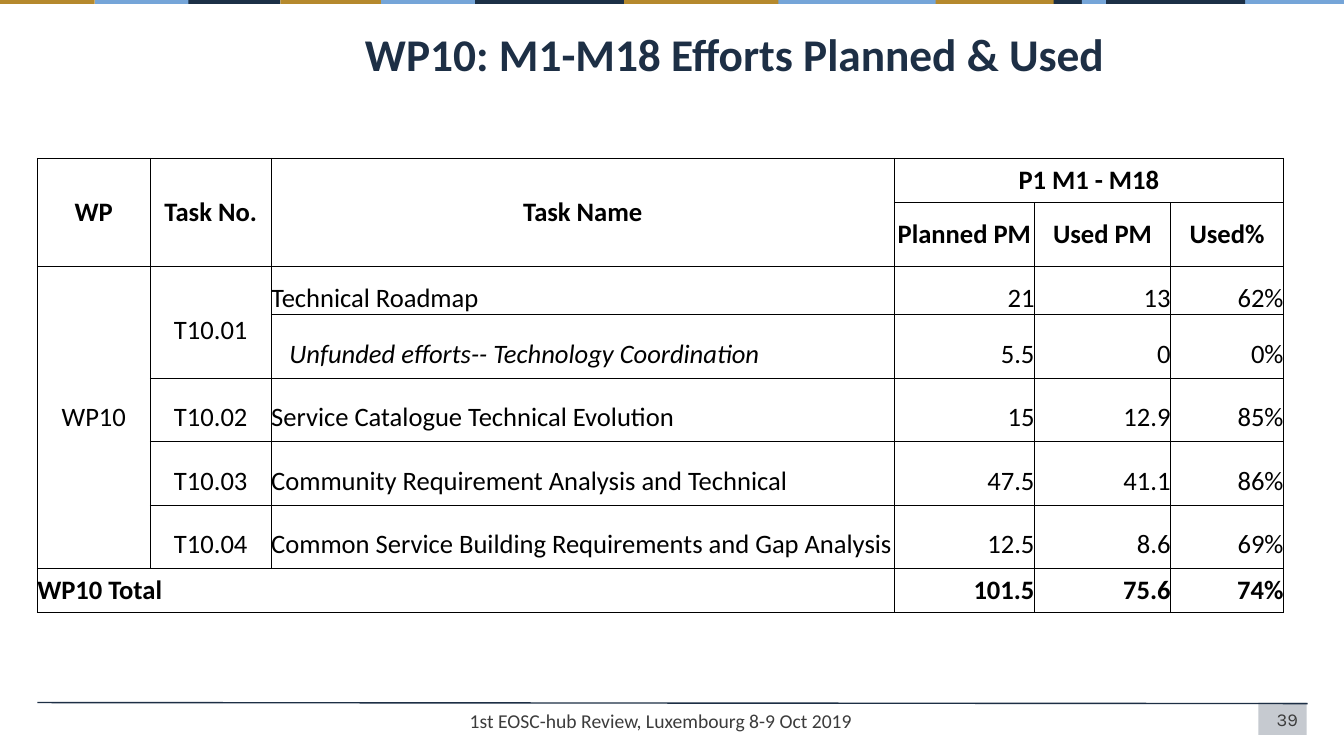
from lxml import etree
from pptx import Presentation
from pptx.dml.color import RGBColor
from pptx.enum.shapes import MSO_CONNECTOR, MSO_SHAPE
from pptx.enum.text import MSO_ANCHOR as Anchor, PP_ALIGN as Align
from pptx.oxml.ns import qn
from pptx.util import Inches, Pt

NAVY = RGBColor(0x1D, 0x2F, 0x45)
BAND_NAVY = RGBColor(0x1C, 0x30, 0x46)
GOLD = RGBColor(0xB5, 0x89, 0x2D)
BLUE = RGBColor(0x75, 0xA5, 0xD8)
GREY = RGBColor(0x3C, 0x3C, 0x3C)
BLACK = RGBColor(0, 0, 0)
WHITE = RGBColor(0xFF, 0xFF, 0xFF)

BANDS = [
    (4.54, 1.65, BAND_NAVY), (8.66, 4.62, GOLD), (12.25, 1.09, BLUE),
    (2.78, 1.48, GOLD), (10.45, 1.9, BAND_NAVY), (7.61, 1.67, BLUE),
    (1.86, 0.92, BAND_NAVY), (0.94, 0.93, BLUE), (3.78, 0.93, BLUE),
    (6.19, 1.53, GOLD), (10.73, 0.24, BLUE), (0, 0.94, GOLD),
]
COLUMN_WIDTHS = [1.12, 1.2, 6.18, 1.39, 1.35, 1.12]
ROW_HEIGHTS = [0.44, 0.63, 0.44, 0.63, 0.63, 0.63, 0.63, 0.44]
MERGES = [
    ((0, 0), (1, 0)), ((0, 1), (1, 1)), ((0, 2), (1, 2)), ((0, 3), (0, 5)),
    ((2, 0), (6, 0)), ((2, 1), (3, 1)), ((7, 0), (7, 2)),
]
EFFORTS = [
    ["WP", "Task No.", "Task Name", "P1 M1 - M18", "", ""],
    ["", "", "", "Planned PM", "Used PM", "Used%"],
    ["WP10", "T10.01", "Technical Roadmap", "21", "13", "62%"],
    ["", "", "Unfunded efforts-- Technology Coordination", "5.5", "0", "0%"],
    ["", "T10.02", "Service Catalogue Technical Evolution", "15", "12.9", "85%"],
    ["", "T10.03", "Community Requirement Analysis and Technical", "47.5", "41.1", "86%"],
    ["", "T10.04", "Common Service Building Requirements and Gap Analysis",
     "12.5", "8.6", "69%"],
    ["WP10 Total", "", "", "101.5", "75.6", "74%"],
]
HEADER_ROWS = 2
UNFUNDED_ROW = 3
TOTAL_ROW = len(EFFORTS) - 1


def write_text(frame, text, size, color, font="Calibri", bold=False,
               italic=False, align=Align.LEFT, spacing=1.0):
    """Put one formatted paragraph into a text frame."""
    paragraph = frame.paragraphs[0]
    paragraph.alignment = align
    paragraph.line_spacing = spacing
    run = paragraph.add_run()
    run.text = text
    run.font.name = font
    run.font.size = Pt(size)
    run.font.bold = bold
    run.font.italic = italic
    run.font.color.rgb = color


def add_rectangle(slide, left, top, width, height, color, opacity=100):
    """Add a borderless rectangle, optionally see-through."""
    shape = slide.shapes.add_shape(
        MSO_SHAPE.RECTANGLE, Inches(left), Inches(top), Inches(width), Inches(height))
    shape.shadow.inherit = False
    shape.line.fill.background()
    shape.fill.solid()
    shape.fill.fore_color.rgb = color
    if opacity < 100:
        value = next(shape.fill._xPr.iter(qn("a:srgbClr")))
        etree.SubElement(value, qn("a:alpha"), val=str(opacity * 1000))


def add_rule(slide):
    """Add the thin line above the footer."""
    rule = slide.shapes.add_connector(
        MSO_CONNECTOR.STRAIGHT, Inches(12.97), Inches(6.98), Inches(0.37), Inches(6.97))
    rule.line.color.rgb = NAVY
    rule.line.width = Pt(1)
    etree.SubElement(rule._element.spPr, qn("a:effectLst"))


def add_label(slide, left, top, width, height, text, **text_format):
    """Add a wrapped text box."""
    box = slide.shapes.add_textbox(
        Inches(left), Inches(top), Inches(width), Inches(height))
    box.text_frame.word_wrap = True
    write_text(box.text_frame, text, **text_format)


def add_title(slide, text):
    """Place and fill the title placeholder."""
    title = slide.shapes.title
    title.left, title.top = Inches(3.52), Inches(0.21)
    title.width, title.height = Inches(9.45), Inches(0.59)
    title.text_frame.vertical_anchor = Anchor.TOP
    write_text(title.text_frame, text, size=32.4, color=NAVY, bold=True)


def style_cell(cell):
    """Give a cell a white fill, no margins and thin black borders."""
    cell.margin_left = cell.margin_right = cell.margin_top = cell.margin_bottom = 0
    cell.vertical_anchor = Anchor.MIDDLE
    cell.fill.solid()
    cell.fill.fore_color.rgb = WHITE
    properties = cell._tc.get_or_add_tcPr()
    for position, side in enumerate(("lnL", "lnR", "lnT", "lnB")):
        border = etree.Element(qn(f"a:{side}"), w=str(Pt(0.75)))
        fill = etree.SubElement(border, qn("a:solidFill"))
        etree.SubElement(fill, qn("a:srgbClr"), val=str(BLACK))
        properties.insert(position, border)


def cell_format(row, column):
    """Return the text format for a table position."""
    is_header = row < HEADER_ROWS
    is_total = row == TOTAL_ROW
    if column > 2:
        align = Align.RIGHT
    elif column == 2 or is_total:
        align = Align.JUSTIFY
    else:
        align = Align.CENTER
    return {
        "bold": is_header or is_total,
        "italic": (row, column) == (UNFUNDED_ROW, 2),
        "align": Align.CENTER if is_header else align,
        "spacing": 1.0 if is_header or is_total or column == 0 else 1.5,
    }


def add_efforts_table(slide):
    """Add the table of planned and used efforts."""
    table = slide.shapes.add_table(
        len(ROW_HEIGHTS), len(COLUMN_WIDTHS), Inches(0.37), Inches(1.57),
        Inches(sum(COLUMN_WIDTHS)), Inches(sum(ROW_HEIGHTS))).table
    table.first_row = table.horz_banding = False
    for column, width in zip(table.columns, COLUMN_WIDTHS):
        column.width = Inches(width)
    for row, height in zip(table.rows, ROW_HEIGHTS):
        row.height = Inches(height)
    for start, end in MERGES:
        table.cell(*start).merge(table.cell(*end))
    for row, texts in enumerate(EFFORTS):
        for column, text in enumerate(texts):
            cell = table.cell(row, column)
            style_cell(cell)
            if text:
                write_text(cell.text_frame, text, size=19, color=BLACK,
                           **cell_format(row, column))
    table.cell(UNFUNDED_ROW, 2).margin_left = Inches(0.18)


def main():
    """Build and save the slide."""
    presentation = Presentation()
    presentation.slide_width = Inches(13.33)
    presentation.slide_height = Inches(7.5)
    slide = presentation.slides.add_slide(presentation.slide_layouts[5])
    add_rectangle(slide, 12.48, 6.97, 0.48, 0.32, NAVY, opacity=25)
    add_rule(slide)
    for left, width, color in BANDS:
        add_rectangle(slide, left, 0, width, 0.04, color)
    add_efforts_table(slide)
    add_label(slide, 9.56, 6.98, 3.41, 0.31, "39",
              size=13, color=GREY, font="Karla", align=Align.RIGHT)
    add_title(slide, "WP10: M1-M18 Efforts Planned & Used")
    add_label(slide, 4.56, 6.98, 4.22, 0.31,
              "1st EOSC-hub Review, Luxembourg 8-9 Oct 2019", size=14, color=GREY)
    presentation.save("out.pptx")


if __name__ == "__main__":
    main()
